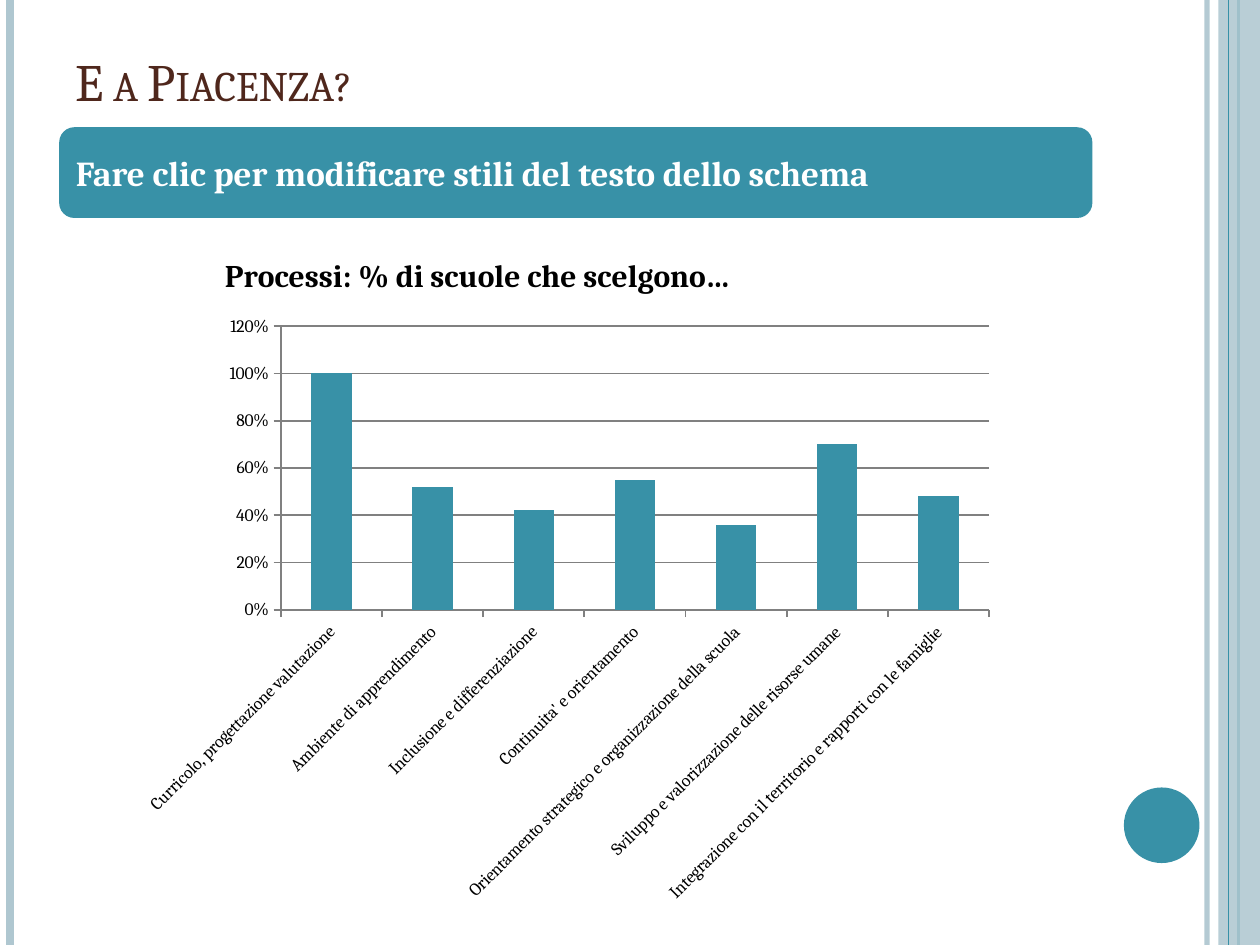
from lxml import etree
from pptx import Presentation
from pptx.chart.data import CategoryChartData
from pptx.dml.color import RGBColor
from pptx.enum.chart import XL_CHART_TYPE, XL_TICK_MARK
from pptx.enum.shapes import MSO_CONNECTOR, MSO_SHAPE
from pptx.enum.text import MSO_ANCHOR, PP_ALIGN
from pptx.oxml import parse_xml
from pptx.oxml.ns import nsdecls, qn
from pptx.util import Inches, Pt

COLUMNS = XL_CHART_TYPE.COLUMN_CLUSTERED
CROSS, NO_TICK = XL_TICK_MARK.CROSS, XL_TICK_MARK.NONE
OUTSIDE = XL_TICK_MARK.OUTSIDE
STRAIGHT = MSO_CONNECTOR.STRAIGHT
RECTANGLE, ROUNDED, OVAL = MSO_SHAPE.RECTANGLE, MSO_SHAPE.ROUNDED_RECTANGLE, MSO_SHAPE.OVAL
LEFT, BOTTOM, MIDDLE = PP_ALIGN.LEFT, MSO_ANCHOR.BOTTOM, MSO_ANCHOR.MIDDLE

FONT = "Cambria"
TEAL, PALE, BROWN = "3891A7", "AFC7D0", "4F271C"
BLACK, WHITE, GREY = "000000", "FFFFFF", "808080"
SLIDE_WIDTH, SLIDE_HEIGHT = 10, 7.5

HEADING = "E a Piacenza?"
BANNER = "Fare clic per modificare stili del testo dello schema"
CHART_HEADING = "Processi: % di scuole che scelgono…"
PROCESSES = [
    ("Curricolo, progettazione valutazione", 1),
    ("Ambiente di apprendimento", 0.52),
    ("Inclusione e differenziazione", 0.42),
    ("Continuita' e orientamento", 0.55),
    ("Orientamento strategico e organizzazione della scuola", 0.36),
    ("Sviluppo e valorizzazione delle risorse umane", 0.7),
    ("Integrazione con il territorio e rapporti con le famiglie", 0.48),
]
STRIPES_BEHIND = [(9.58, PALE, 3, 93), (0.08, PALE, 4.5, 100), (9.83, TEAL, 1.5, 100)]
STRIPE_FRONT = (9.75, TEAL, 0.75, 100)
CHART_BOX = (0.94, 1.8, 7.05, 5.47)
CHART_HEADING_PLACE = {"x": 0.8, "y": 0.18}
PLOT_PLACE = {"x": 1.29, "y": 0.79, "w": 5.62, "h": 2.25}


def rgb(color):
    """Turn a hex string into a colour."""
    return RGBColor.from_string(color)


def set_alpha(properties, percent):
    """Make the first solid colour inside shape properties partly transparent."""
    color = properties.find(".//" + qn("a:srgbClr"))
    etree.SubElement(color, qn("a:alpha"), val=str(percent * 1000))


def style_font(font, size, color, bold=False):
    """Apply the slide's typeface with a size and colour."""
    font.name, font.size, font.bold = FONT, Pt(size), bold
    font.color.rgb = rgb(color)


def add_stripe(slide, x, color, width, opacity):
    """Draw a full-height vertical line."""
    stripe = slide.shapes.add_connector(
        STRAIGHT, Inches(x), 0, Inches(x), Inches(SLIDE_HEIGHT))
    stripe.line.color.rgb = rgb(color)
    stripe.line.width = Pt(width)
    if opacity < 100:
        set_alpha(stripe.element.spPr, opacity)
    etree.SubElement(stripe.element.spPr, qn("a:effectLst"))


def add_block(slide, preset, box, color):
    """Add a flat filled shape without outline."""
    block = slide.shapes.add_shape(preset, *map(Inches, box))
    block.fill.solid()
    block.fill.fore_color.rgb = rgb(color)
    block.line.fill.background()
    block.shadow.inherit = False
    return block


def write(shape, text, size, color, anchor, bold=False):
    """Put one left-aligned line of text in a shape."""
    frame = shape.text_frame
    frame.text = text
    frame.word_wrap = True
    frame.vertical_anchor = anchor
    paragraph = frame.paragraphs[0]
    paragraph.alignment = LEFT
    style_font(paragraph.runs[0].font, size, color, bold)


def manual_layout(place, inner=False):
    """Build a chart layout from inches within the chart area."""
    _, _, width, height = CHART_BOX
    extent = {"x": width, "y": height, "w": width, "h": height}
    target = '<c:layoutTarget val="inner"/>' if inner else ""
    modes = "".join(f'<c:{key}Mode val="edge"/>' for key in ("x", "y"))
    values = "".join(f'<c:{key} val="{inches / extent[key]}"/>'
                     for key, inches in place.items())
    return parse_xml(f'<c:layout {nsdecls("c")}><c:manualLayout>'
                     f'{target}{modes}{values}</c:manualLayout></c:layout>')


def add_process_chart(slide):
    """Add the column chart of the processes chosen by schools."""
    data = CategoryChartData(number_format="0%")
    data.categories = [name for name, _ in PROCESSES]
    data.add_series("Series 1", [share for _, share in PROCESSES])
    chart = slide.shapes.add_chart(COLUMNS, *map(Inches, CHART_BOX), data).chart
    style_font(chart.font, 10, BLACK)
    chart.has_legend = False
    chart.has_title = True
    heading = chart.chart_title
    heading.include_in_layout = False
    heading.text_frame.text = CHART_HEADING
    style_font(heading.text_frame.paragraphs[0].runs[0].font, 18, BLACK, True)

    plot = chart.plots[0]
    plot.gap_width = 150
    plot.vary_by_categories = False
    columns = plot.series[0].format.fill
    columns.solid()
    columns.fore_color.rgb = rgb(TEAL)

    shares, names = chart.value_axis, chart.category_axis
    shares.minimum_scale, shares.maximum_scale, shares.major_unit = 0, 1.2, 0.2
    shares.has_major_gridlines = True
    shares.tick_labels.number_format = "0%"
    shares.tick_labels.number_format_is_linked = False
    for axis in (shares, names):
        axis.major_tick_mark, axis.minor_tick_mark = OUTSIDE, NO_TICK
        style_font(axis.tick_labels.font, 10, BLACK)
    for line in (shares.format.line, names.format.line, shares.major_gridlines.format.line):
        line.color.rgb = rgb(GREY)
        line.width = Pt(1)

    root = chart.element
    for old in root.xpath("c:chart/c:title/c:layout | c:chart/c:plotArea/c:layout"):
        old.getparent().remove(old)
    root.xpath("c:chart/c:title/c:tx")[0].addnext(manual_layout(CHART_HEADING_PLACE))
    root.xpath("c:chart/c:plotArea")[0].insert(0, manual_layout(PLOT_PLACE, True))
    root.xpath(".//c:catAx/c:txPr/a:bodyPr")[0].set("rot", str(-45 * 60000))


def main():
    """Build and save the slide."""
    deck = Presentation()
    deck.slide_width, deck.slide_height = Inches(SLIDE_WIDTH), Inches(SLIDE_HEIGHT)
    slide = deck.slides.add_slide(deck.slide_layouts[5])

    for stripe in STRIPES_BEHIND:
        add_stripe(slide, *stripe)
    margin = add_block(slide, RECTANGLE, (9.67, 0, 0.33, SLIDE_HEIGHT), PALE)
    set_alpha(margin.element.spPr, 87)
    add_stripe(slide, *STRIPE_FRONT)
    add_block(slide, OVAL, (8.92, 6.25, 0.6, 0.6), TEAL)

    title = slide.shapes.title
    title.left, title.top, title.width, title.height = map(Inches, (0.5, 0.3, 8.17, 0.64))
    write(title, HEADING, 30, BROWN, BOTTOM)
    title.element.find(".//" + qn("a:rPr")).set("cap", "small")

    banner = add_block(slide, ROUNDED, (0.47, 1.01, 8.2, 0.72), TEAL)
    banner.text_frame.margin_left = Inches(0.1)
    write(banner, BANNER, 20, WHITE, MIDDLE, True)
    add_process_chart(slide)
    deck.save("out.pptx")


if __name__ == "__main__":
    main()
